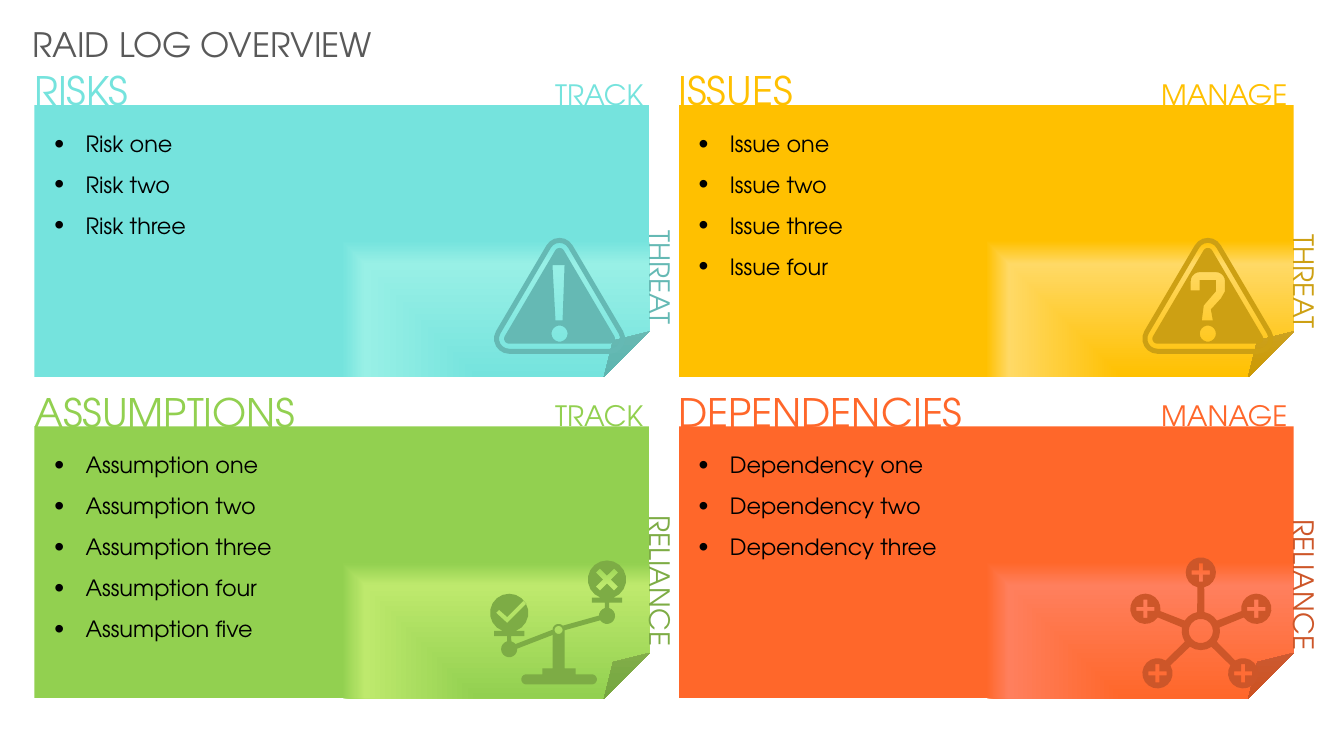
import math
import pptx
import pptx.util
import pptx.oxml
import pptx.enum.text
import pptx.enum.shapes
import pptx.dml.color
import lxml.etree

Inches = pptx.util.Inches
RGB = pptx.dml.color.RGBColor.from_string
ALIGN = pptx.enum.text.PP_ALIGN
ANCHOR = pptx.enum.text.MSO_ANCHOR
NS = "http://schemas.openxmlformats.org/drawingml/2006/main"
FONT = "TeX Gyre Adventor"
HUES = {
    "title": "595959", "text": "000000",
    "risk": "75E3DD", "risk glow": "98F0E6", "risk dark": "65B9B4",
    "issue": "FFC000", "issue glow": "FFD966", "issue dark": "CDA013",
    "guess": "92D050", "guess glow": "BEE96D", "guess dark": "7DAC45",
    "need": "FF672A", "need glow": "FF7F5D", "need dark": "CD5629",
}

deck = pptx.Presentation()
deck.slide_width = Inches(13.33)
deck.slide_height = Inches(7.5)
slide = deck.slides.add_slide(deck.slide_layouts[6])
shapes = slide.shapes


def write(text, spot, size, hue, align=ALIGN.LEFT, anchor=ANCHOR.TOP, pad=True):
    box = shapes.add_textbox(*map(Inches, spot))
    frame = box.text_frame
    frame.word_wrap = True
    frame.auto_size = pptx.enum.text.MSO_AUTO_SIZE.SHAPE_TO_FIT_TEXT
    frame.vertical_anchor = anchor
    if not pad:
        frame.margin_left = frame.margin_right = 0
        frame.margin_top = frame.margin_bottom = 0
    para = frame.paragraphs[0]
    para.alignment = align
    run = para.add_run()
    run.text = text
    run.font.size = pptx.util.Pt(size)
    run.font.name = FONT
    run.font.color.rgb = RGB(HUES[hue])
    return box


def trace(rings, hue):
    pen = None
    for ring in rings:
        dots = []
        for x, y, *arc in ring:
            if not arc:
                dots.append((Inches(x), Inches(y)))
                continue
            r, start, end = arc if len(arc) == 3 else (arc[0], 0, 360)
            steps = math.ceil((end - start) / 20)
            for step in range(steps + 1):
                turn = math.radians(start + (end - start) * step / steps)
                dots.append((Inches(x + r * math.cos(turn)),
                             Inches(y + r * math.sin(turn))))
        if pen is None:
            pen = shapes.build_freeform(*dots[0], scale=1.0)
        else:
            pen.move_to(*dots[0])
        pen.add_line_segments(dots[1:], close=True)
    form = pen.convert_to_shape()
    form.shadow.inherit = False
    form.fill.solid()
    form.fill.fore_color.rgb = RGB(HUES[hue])
    form.line.fill.background()


write("RAID LOG OVERVIEW", (0.22, 0.19, 4.25, 0.5), 24, "title")

cards = [
    (0, 0, "risk", "RISKS", "TRACK", "THREAT", "Risk", 3),
    (0, 1, "guess", "ASSUMPTIONS", "TRACK", "RELIANCE", "Assumption", 5),
    (1, 0, "issue", "ISSUES", "MANAGE", "THREAT", "Issue", 4),
    (1, 1, "need", "DEPENDENCIES", "MANAGE", "RELIANCE", "Dependency", 3),
]
for col, row, hue, head, tag, side, noun, count in cards:
    x, y = 0.34 + 6.39 * col, 1.04 + 3.19 * row
    card = shapes.add_shape(pptx.enum.shapes.MSO_SHAPE.FOLDED_CORNER,
                            Inches(x), Inches(y), Inches(6.1), Inches(2.7))
    card.shadow.inherit = False
    card.line.fill.background()
    card.fill.background()
    stops = "".join(
        f'<a:gs pos="{pos}000"><a:srgbClr val="{HUES[name]}"/></a:gs>'
        for pos, name in ((0, hue), (83, hue + " glow"), (100, hue)))
    props = card.element.spPr
    props.replace(props.find(f"{{{NS}}}noFill"), pptx.oxml.parse_xml(
        f'<a:gradFill xmlns:a="{NS}" rotWithShape="1"><a:gsLst>{stops}</a:gsLst>'
        '<a:path path="rect"><a:fillToRect l="100000" t="100000"/></a:path>'
        '</a:gradFill>'))
    frame = card.text_frame
    frame.word_wrap = True
    frame.vertical_anchor = ANCHOR.TOP
    frame.margin_left, frame.margin_top = Inches(0.2), Inches(0.25)
    frame.margin_right = frame.margin_bottom = Inches(0.05)
    for i, word in enumerate(("one", "two", "three", "four", "five")[:count]):
        para = frame.add_paragraph() if i else frame.paragraphs[0]
        para.alignment = ALIGN.LEFT
        para.space_after = pptx.util.Pt(10)
        rules = para._p.get_or_add_pPr()
        rules.set("marL", str(Inches(0.31)))
        rules.set("indent", str(Inches(-0.31)))
        tint = lxml.etree.SubElement(rules, f"{{{NS}}}buClr")
        lxml.etree.SubElement(tint, f"{{{NS}}}srgbClr", val=HUES["text"])
        lxml.etree.SubElement(rules, f"{{{NS}}}buSzPct", val="125000")
        lxml.etree.SubElement(rules, f"{{{NS}}}buFont", typeface="Arial")
        lxml.etree.SubElement(rules, f"{{{NS}}}buChar", char="•")
        run = para.add_run()
        run.text = f"{noun} {word}"
        run.font.size = pptx.util.Pt(16)
        run.font.name = FONT
        run.font.color.rgb = RGB(HUES["text"])
    write(head, (x, y - 0.38, 3.02, 0.47), 28, hue, anchor=ANCHOR.BOTTOM, pad=False)
    write(tag, (x + 3.68, y - 0.28, 2.36, 0.34), 20, hue,
          ALIGN.RIGHT, ANCHOR.BOTTOM, False)
    wide = 1.46 if row else 1.04
    mid = y + 2.18 + 0.04 * col - wide / 2
    label = write(side, (x + 6.21 - wide / 2, mid - 0.17, wide, 0.34), 20,
                  hue + " dark", ALIGN.RIGHT, pad=False)
    label.rotation = 90

bang = [(5.6, 2.63), (5.58, 3.18), (5.51, 3.18), (5.48, 2.63)]
query = [(12.15, 2.89), (12.11, 2.96), (12.01, 3.07), (12.03, 3.18),
         (11.92, 3.18), (11.94, 3.03), (12.06, 2.89), (12.06, 2.78),
         (11.9, 2.78), (11.9, 2.88), (11.81, 2.88),
         (11.9, 2.79, 0.09, 180, 270), (12.06, 2.79, 0.09, 270, 360)]
for x, mark, hue in ((5.55, bang, "risk dark"), (11.98, query, "issue dark")):
    signs = [[(x, 2.51, r, 210, 330), (x + 0.5, 3.36, r, -30, 90),
              (x - 0.5, 3.36, r, 90, 210)] for r in (0.15, 0.1, 0.05)]
    trace(signs + [mark, [(x, 3.31, 0.08)]], hue)

plus = [(-0.09, -0.02), (-0.02, -0.02), (-0.02, -0.09), (0.02, -0.09),
        (0.02, -0.02), (0.09, -0.02), (0.09, 0.02), (0.02, 0.02),
        (0.02, 0.09), (-0.02, 0.09), (-0.02, 0.02), (-0.09, 0.02)]
cross = [(a - b, a + b) for a, b in plus]
tick = [(-0.02, 0.1), (-0.13, 0), (-0.1, -0.03), (-0.02, 0.04),
        (0.14, -0.12), (0.17, -0.09)]

hub = (11.91, 6.26)
nodes = [(11.91, 5.68), (12.46, 6.04), (12.33, 6.68), (11.48, 6.68), (11.36, 6.04)]
turns = [math.degrees(math.atan2(y - hub[1], x - hub[0])) for x, y in nodes]
web, holes = [], [[(*hub, 0.12)]]
for i, (x, y) in enumerate(nodes):
    turn = turns[i]
    gap = (turns[(i + 1) % 5] - turn) % 360
    web.append((x, y, 0.15, turn + 193, turn + 527))
    web.append((*hub, 0.19, turn + 11, turn + gap - 11))
    holes.append([(x + a, y + b) for a, b in plus])
trace([web] + holes, "need dark")

trace([[(5.54, 6.25, 0.06, 180, 360), (5.6, 6.63), (5.71, 6.63), (5.71, 6.69),
        (5.87, 6.74, 0.05, -90, 90), (5.22, 6.74, 0.05, 90, 270),
        (5.38, 6.69), (5.38, 6.63), (5.48, 6.63)],
       [(5.54, 6.25, 0.04)]], "guess dark")
for x, y, sign, tip in ((5.05, 6.08, tick, (5.49, 6.27)),
                        (6.02, 5.75, cross, (5.59, 6.23))):
    ball = y + 0.36
    trace([[(x, y, 0.19, 110, 430), (x + 0.15, y + 0.18), (x + 0.15, y + 0.23),
            (x + 0.02, y + 0.23), (x, ball, 0.08, -75, 255), (x - 0.02, y + 0.23),
            (x - 0.15, y + 0.23), (x - 0.15, y + 0.18)],
           [(x + a, y + b) for a, b in sign]], "guess dark")
    arm = shapes.add_connector(pptx.enum.shapes.MSO_CONNECTOR.STRAIGHT,
                               *map(Inches, (x, ball, *tip)))
    arm.line.width = pptx.util.Pt(3.5)
    arm.line.color.rgb = RGB(HUES["guess dark"])
    lxml.etree.SubElement(arm.element.spPr, f"{{{NS}}}effectLst")

deck.save("out.pptx")
